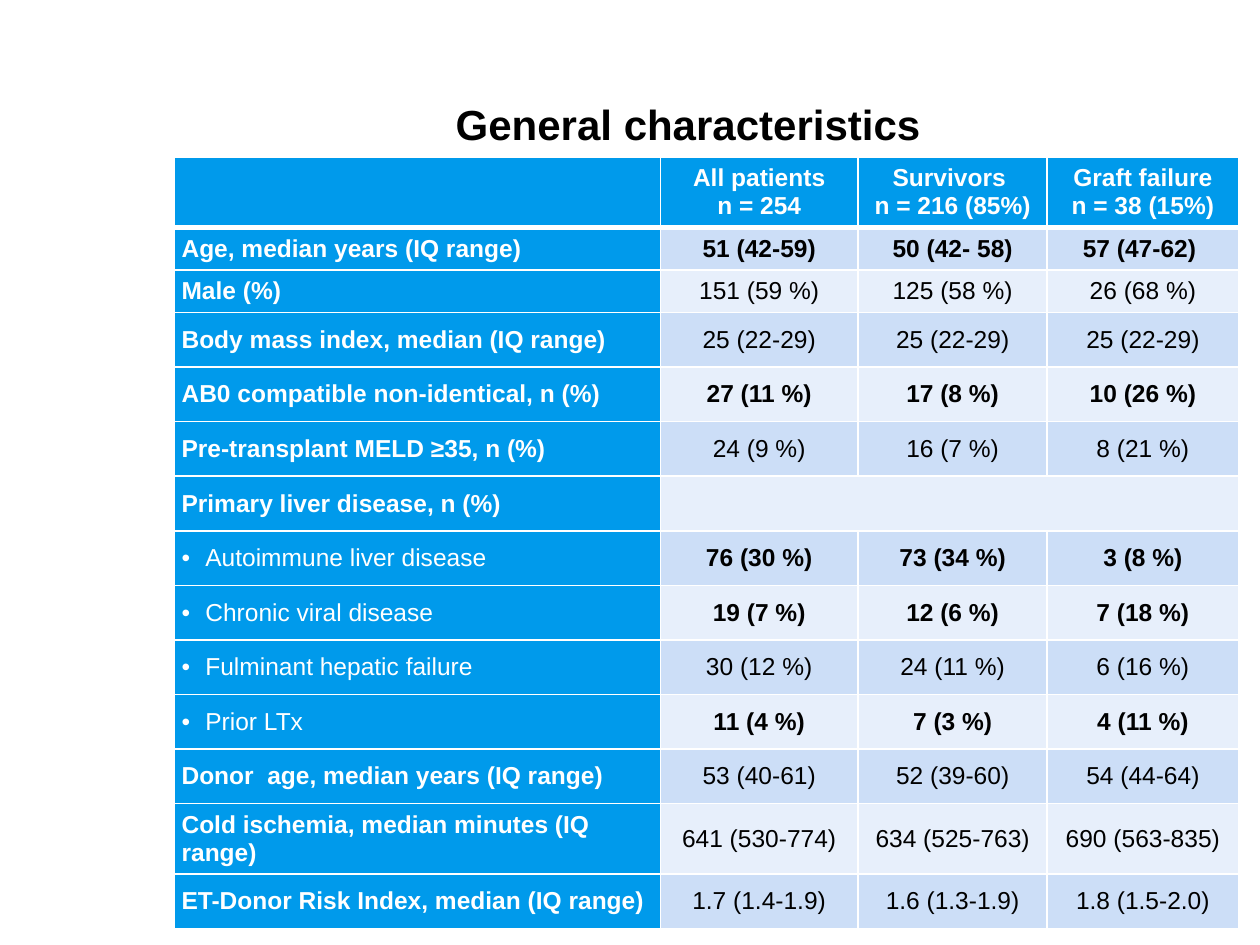
from lxml import etree
from pptx import Presentation
from pptx.dml.color import RGBColor
from pptx.enum.text import MSO_ANCHOR, PP_ALIGN
from pptx.oxml.ns import qn
from pptx.util import Cm, Pt

LEFT, CENTER = PP_ALIGN.LEFT, PP_ALIGN.CENTER
MIDDLE = MSO_ANCHOR.MIDDLE

COLORS = {"head": "009AEB", "odd": "CCDEF7", "even": "E7EFFB",
          "white": "FFFFFF", "black": "000000"}
FONT = "Arial"
TITLE = "General characteristics"
HEADER = ["", ["All patients", "n = 254"], "Survivors \nn = 216 (85%)",
          ["Graft failure", "n = 38 (15%)"]]
PLAIN, BOLD = False, True
ROWS = [
    ("Age, median years (IQ range)", BOLD, ["51 (42-59)", "50 (42- 58)", "57 (47-62) "]),
    ("Male (%)", PLAIN, ["151 (59 %)", "125 (58 %)", "26 (68 %)"]),
    ("Body mass index, median (IQ range)", PLAIN, ["25 (22-29)"] * 3),
    ("AB0 compatible non-identical, n (%)", BOLD, ["27 (11 %)", "17 (8 %)", "10 (26 %)"]),
    ("Pre-transplant MELD ≥35, n (%)", PLAIN, ["24 (9 %)", "16 (7 %)", "8 (21 %)"]),
    ("Primary liver disease, n (%)", PLAIN, []),
    ("Autoimmune liver disease", BOLD, ["76 (30 %)", "73 (34 %)", "3 (8 %)"]),
    ("Chronic viral disease", BOLD, ["19 (7 %)", "12 (6 %)", "7 (18 %)"]),
    ("Fulminant hepatic failure", PLAIN, ["30 (12 %)", "24 (11 %)", "6 (16 %)"]),
    ("Prior LTx", BOLD, ["11 (4 %)", "7 (3 %)", "4 (11 %)"]),
    ("Donor  age, median years (IQ range)", PLAIN, ["53 (40-61)", "52 (39-60)", "54 (44-64)"]),
    ("Cold ischemia, median minutes (IQ range)", PLAIN,
     ["641 (530-774)", "634 (525-763)", "690 (563-835)"]),
    ("ET-Donor Risk Index, median (IQ range)", PLAIN,
     ["1.7 (1.4-1.9)", "1.6 (1.3-1.9)", "1.8 (1.5-2.0)"]),
]
DISEASES = {"Autoimmune liver disease", "Chronic viral disease",
            "Fulminant hepatic failure", "Prior LTx"}
COL_WIDTHS = [9.8, 3.99, 3.81, 3.86]
ROW_HEIGHTS = [1.42] + [0.86] * 2 + [1.1] * 9 + [1.42, 1.1]


def add_bullet(p):
    pPr = p._p.get_or_add_pPr()
    pPr.set("marL", str(Cm(0.48)))
    pPr.set("indent", str(-Cm(0.48)))
    etree.SubElement(pPr, qn("a:buFont")).set("typeface", FONT)
    etree.SubElement(pPr, qn("a:buChar")).set("char", "•")


def write(tf, text, size=14, color="black", bold=False, align=CENTER,
          bullet=False, spacing=None):
    lines = [text] if isinstance(text, str) else text
    for i, line in enumerate(lines):
        p = tf.paragraphs[0] if i == 0 else tf.add_paragraph()
        p.text = line
        p.alignment = align
        if spacing:
            p.line_spacing = spacing
        if bullet:
            add_bullet(p)
        for r in p.runs:
            r.font.name, r.font.size, r.font.bold = FONT, Pt(size), bold
            r.font.color.rgb = RGBColor.from_string(COLORS[color])


def set_borders(cell, top, bottom):
    tcPr = cell._tc.get_or_add_tcPr()
    sides = [("L", 1), ("R", 1), ("T", top), ("B", bottom)]
    for i, (side, width) in enumerate(sides):
        ln = etree.Element(qn("a:ln" + side), w=str(Pt(width)))
        fill = etree.SubElement(ln, qn("a:solidFill"))
        etree.SubElement(fill, qn("a:srgbClr")).set("val", COLORS["white"])
        tcPr.insert(i, ln)


def style_cell(cell, fill, row):
    cell.fill.solid()
    cell.fill.fore_color.rgb = RGBColor.from_string(COLORS[fill])
    cell.vertical_anchor = MIDDLE
    cell.margin_left = cell.margin_right = Cm(0.15)
    cell.margin_top = cell.margin_bottom = Cm(0.15)
    set_borders(cell, 3 if row == 1 else 1, 3 if row == 0 else 1)


def add_characteristics(s):
    frame = s.shapes.add_table(len(ROW_HEIGHTS), len(COL_WIDTHS), Cm(3.51), Cm(3.16),
                               Cm(sum(COL_WIDTHS)), Cm(sum(ROW_HEIGHTS)))
    table = frame.table
    table.first_row = table.horz_banding = False
    for col, width in zip(table.columns, COL_WIDTHS):
        col.width = Cm(width)
    for row, height in zip(table.rows, ROW_HEIGHTS):
        row.height = Cm(height)
    for r in range(len(ROW_HEIGHTS)):
        for c in range(len(COL_WIDTHS)):
            fill = "head" if r == 0 or c == 0 else "odd" if r % 2 else "even"
            style_cell(table.cell(r, c), fill, r)
    for c, text in enumerate(HEADER):
        write(table.cell(0, c).text_frame, text, color="white", bold=True)
    for r, (label, bold, values) in enumerate(ROWS, 1):
        disease = label in DISEASES
        write(table.cell(r, 0).text_frame, label, color="white",
              bold=not disease, align=LEFT, bullet=disease)
        for c, value in enumerate(values, 1):
            write(table.cell(r, c).text_frame, value, bold=bold)
        if not values:
            table.cell(r, 1).merge(table.cell(r, len(COL_WIDTHS) - 1))


def main():
    prs = Presentation()
    prs.slide_width, prs.slide_height = Cm(25.4), Cm(19.05)
    s = prs.slides.add_slide(prs.slide_layouts[5])
    title = s.shapes.title
    title.left, title.top, title.width, title.height = Cm(3.81), Cm(1.5), Cm(20.12), Cm(2.11)
    tf = title.text_frame
    tf.margin_left = tf.margin_right = tf.margin_top = tf.margin_bottom = 0
    tf.vertical_anchor = MIDDLE
    tf.word_wrap = True
    write(tf, TITLE, size=24, bold=True, spacing=0.9)
    add_characteristics(s)
    prs.save("out.pptx")


if __name__ == "__main__":
    main()
